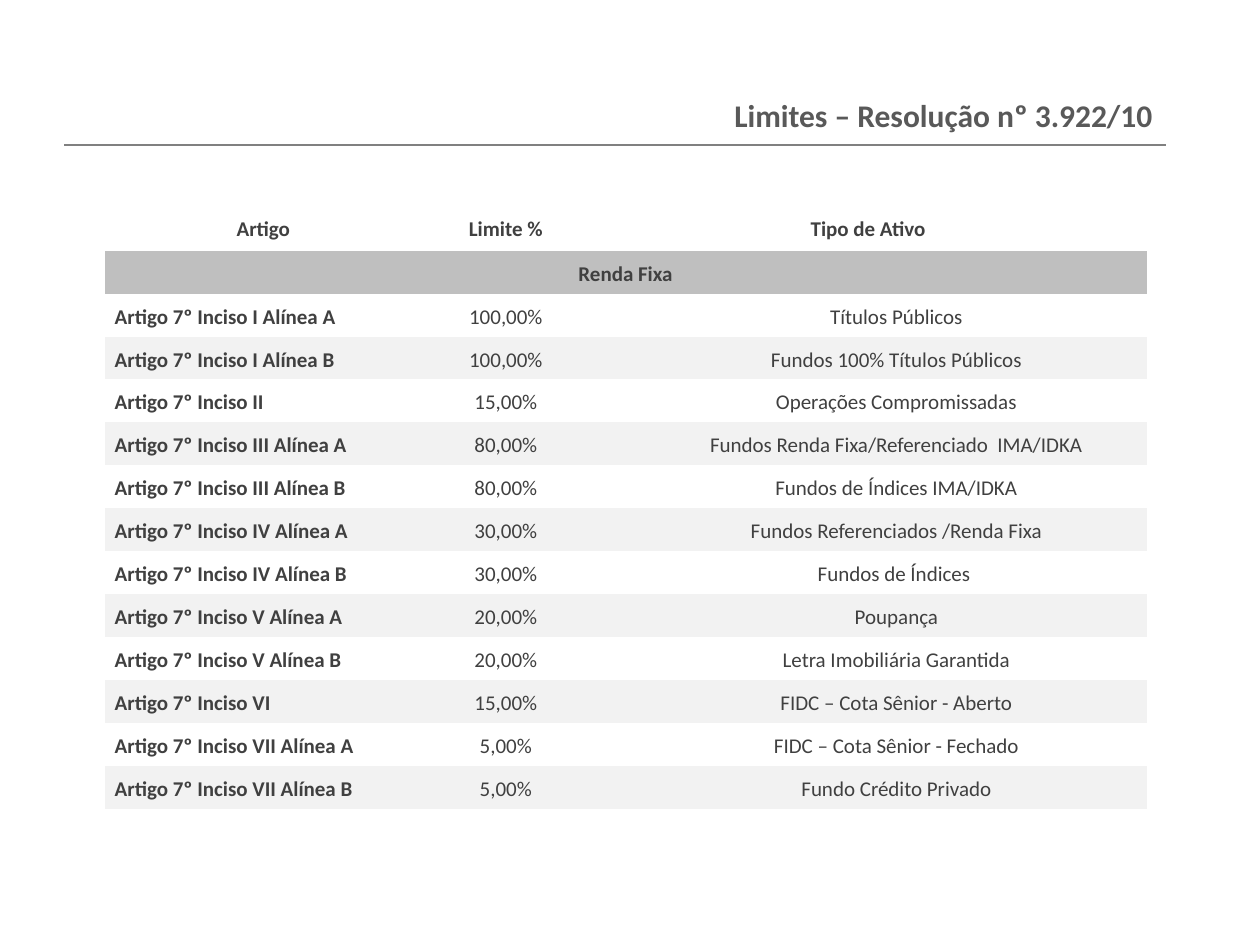
from pptx import Presentation
from pptx import util as u
from pptx.dml.color import RGBColor
from pptx.enum import shapes, text
from pptx.oxml import ns, parse_xml

COLORS = {"title": "595959", "text": "404040", "rule": "808080",
          "section": "BFBFBF", "band": "F2F2F2"}
PLAIN_TABLE = "{2D5ABB26-0587-4C30-8999-92F81FD0307C}"

HEADER = ("Artigo", "Limite %", "Tipo de Ativo")
SECTION = "Renda Fixa"
LIMITS = [
    ("I Alínea A", "100,00%", "Títulos Públicos"),
    ("I Alínea B", "100,00%", "Fundos 100% Títulos Públicos"),
    ("II", "15,00%", "Operações Compromissadas"),
    ("III Alínea A", "80,00%", "Fundos Renda Fixa/Referenciado  IMA/IDKA"),
    ("III Alínea B", "80,00%", "Fundos de Índices IMA/IDKA"),
    ("IV Alínea A", "30,00%", "Fundos Referenciados /Renda Fixa"),
    ("IV Alínea B", "30,00%", "Fundos de Índices "),
    ("V Alínea A", "20,00%", "Poupança"),
    ("V Alínea B", "20,00%", "Letra Imobiliária Garantida"),
    ("VI", "15,00%", "FIDC – Cota Sênior - Aberto"),
    ("VII Alínea A", "5,00%", "FIDC – Cota Sênior - Fechado"),
    ("VII Alínea B", "5,00%", "Fundo Crédito Privado"),
]


class LimitsPage:
    font = "Calibri"

    def __init__(self, deck):
        self.page = deck.slides.add_slide(deck.slide_layouts[5])

    def color(self, name):
        return RGBColor.from_string(COLORS[name])

    def set_text(self, frame, words, size, color, bold, align):
        frame.text = words
        para = frame.paragraphs[0]
        para.alignment = align
        for span in para.runs:
            span.font.name = self.font
            span.font.size = u.Pt(size)
            span.font.bold = bold
            span.font.color.rgb = self.color(color)
        return para

    def title(self, words, left, top, width, height):
        box = self.page.shapes.title
        box.left, box.top = u.Inches(left), u.Inches(top)
        box.width, box.height = u.Inches(width), u.Inches(height)
        frame = box.text_frame
        frame.word_wrap = True
        frame.auto_size = text.MSO_AUTO_SIZE.NONE
        frame.vertical_anchor = text.MSO_ANCHOR.TOP
        self.set_text(frame, words, 18, "title", True, text.PP_ALIGN.RIGHT)

    def rule(self, left, right, top):
        line = self.page.shapes.add_connector(
            shapes.MSO_CONNECTOR.STRAIGHT, u.Inches(left), u.Inches(top),
            u.Inches(right), u.Inches(top))
        line.line.color.rgb = self.color("rule")
        line.line.width = u.Pt(0.75)
        effects = f"<a:effectLst {ns.nsdecls('a')}/>"
        line._element.spPr.append(parse_xml(effects))

    def table(self, rows, left, top, widths, heights):
        table = self.page.shapes.add_table(
            rows, len(widths), u.Inches(left), u.Inches(top),
            u.Inches(sum(widths)), u.Inches(sum(heights))).table
        table.first_row = table.horz_banding = False
        table._tbl.tblPr.find(ns.qn("a:tableStyleId")).text = PLAIN_TABLE
        for column, width in zip(table.columns, widths):
            column.width = u.Inches(width)
        for row, height in zip(table.rows, heights):
            row.height = u.Inches(height)
        for cell in table.iter_cells():
            cell.margin_left = cell.margin_right = u.Inches(0.08)
            cell.margin_top = cell.margin_bottom = 0
            cell.vertical_anchor = text.MSO_ANCHOR.MIDDLE
            cell.fill.background()
        return table

    def cell(self, cell, words, bold=False, align=text.PP_ALIGN.CENTER):
        para = self.set_text(cell.text_frame, words, 12, "text", bold, align)
        para.line_spacing = 1.15

    def fill_row(self, table, row, color):
        for column in range(len(table.columns)):
            fill = table.cell(row, column).fill
            fill.solid()
            fill.fore_color.rgb = self.color(color)


def main():
    deck = Presentation()
    deck.slide_width, deck.slide_height = u.Inches(10), u.Inches(7.5)
    page = LimitsPage(deck)

    # Title and rule
    page.rule(0.51, 9.25, 1.15)
    page.title("Limites – Resolução nº 3.922/10", 4.29, 0.71, 4.96, 0.67)

    # Table frame: a slightly taller header, then equal rows
    count = len(LIMITS) + 2
    heights = [0.37] + [(4.8 - 0.37) / (count - 1)] * (count - 1)
    table = page.table(count, 0.83, 1.62, [2.52, 1.33, 0.45, 3.97], heights)

    # Header and section rows
    table.cell(0, 2).merge(table.cell(0, 3))
    for column, words in enumerate(HEADER):
        page.cell(table.cell(0, column), words, bold=True)
    table.cell(1, 0).merge(table.cell(1, 3))
    page.cell(table.cell(1, 0), SECTION, bold=True)
    page.fill_row(table, 1, "section")

    # Limits, every second row shaded
    for row, (item, limit, asset) in enumerate(LIMITS, start=2):
        page.cell(table.cell(row, 0), f"Artigo 7º Inciso {item}",
                  bold=True, align=text.PP_ALIGN.LEFT)
        page.cell(table.cell(row, 1), limit)
        page.cell(table.cell(row, 3), asset)
        if row % 2:
            page.fill_row(table, row, "band")

    deck.save("out.pptx")


if __name__ == "__main__":
    main()
